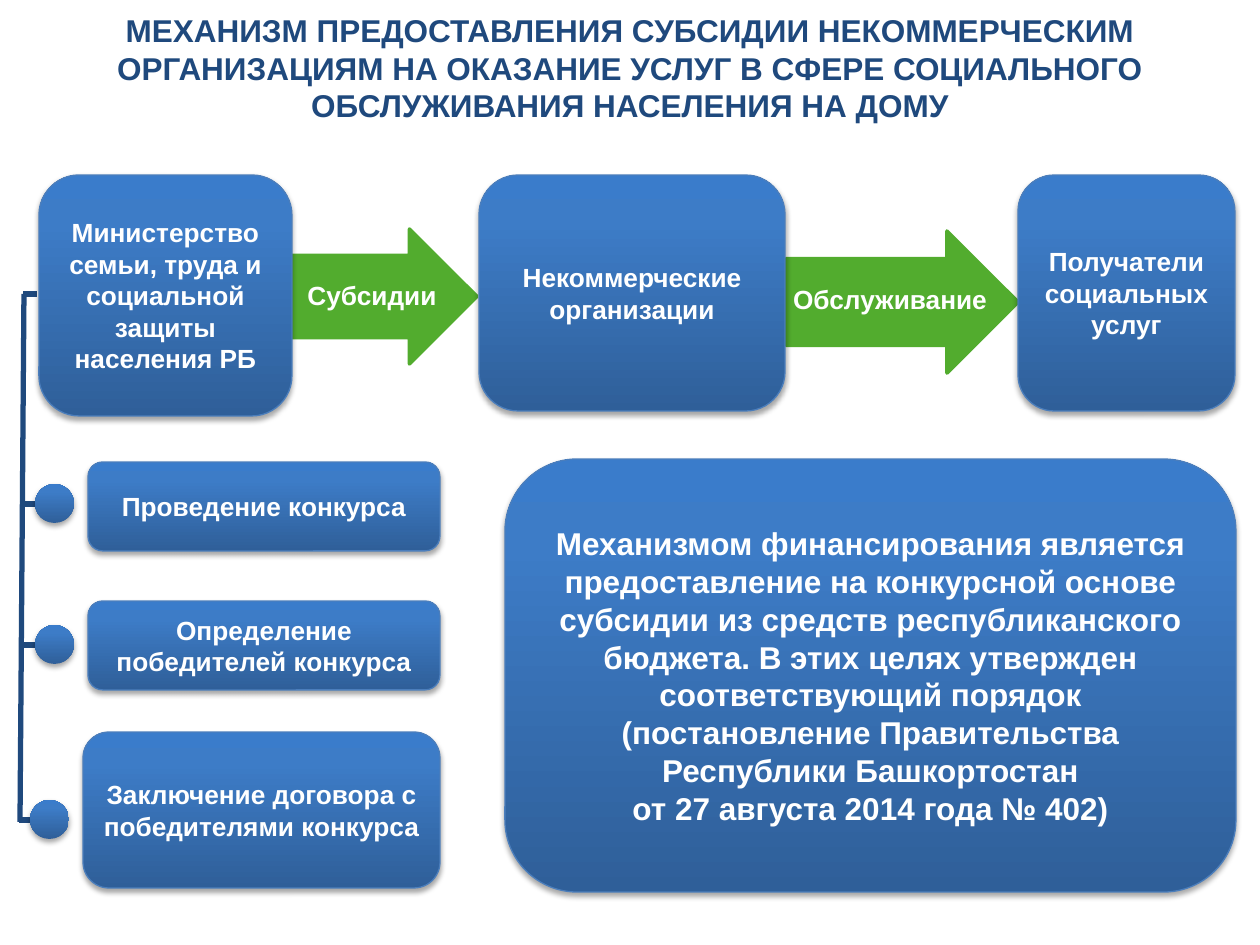
from lxml import etree
from pptx import Presentation
from pptx.dml.color import RGBColor
from pptx.enum.shapes import MSO_CONNECTOR, MSO_SHAPE
from pptx.enum.text import MSO_ANCHOR, MSO_AUTO_SIZE, PP_ALIGN
from pptx.oxml.ns import qn
from pptx.util import Pt

ROUNDED = MSO_SHAPE.ROUNDED_RECTANGLE
OVAL = MSO_SHAPE.OVAL
ARROW = MSO_SHAPE.RIGHT_ARROW
STRAIGHT = MSO_CONNECTOR.STRAIGHT
MIDDLE = MSO_ANCHOR.MIDDLE
NO_FIT = MSO_AUTO_SIZE.NONE
CENTER = PP_ALIGN.CENTER
LEFT = PP_ALIGN.LEFT

PX = 914400 / 126
NAVY, GREEN, EDGE, WHITE = "1F497D", "52AC2E", "4B7EBC", "FFFFFF"
GRADIENT = [(0, "2F5F99"), (80000, "3D7CC7"), (100000, "3A7CCB")]


def color(value):
    return RGBColor.from_string(value)


def write(shape, lines, size, font_color=WHITE, align=CENTER):
    text_frame = shape.text_frame
    text_frame.text = "\n".join(lines)
    for paragraph in text_frame.paragraphs:
        paragraph.alignment = align
        for run in paragraph.runs:
            run.font.name = "Arial"
            run.font.size = Pt(size)
            run.font.bold = True
            run.font.color.rgb = color(font_color)


presentation = Presentation()
presentation.slide_width = round(1260 * PX)
presentation.slide_height = round(945 * PX)
slide = presentation.slides.add_slide(presentation.slide_layouts[5])
shapes = slide.shapes

title = shapes.title
title.left, title.top, title.width, title.height = [round(v * PX) for v in (0, 5, 1260, 125)]
title.text_frame.word_wrap = True
title.text_frame.auto_size = NO_FIT
title.text_frame.vertical_anchor = MIDDLE
write(title, [
    "МЕХАНИЗМ ПРЕДОСТАВЛЕНИЯ СУБСИДИИ НЕКОММЕРЧЕСКИМ",
    "ОРГАНИЗАЦИЯМ НА ОКАЗАНИЕ УСЛУГ В СФЕРЕ СОЦИАЛЬНОГО",
    "ОБСЛУЖИВАНИЯ НАСЕЛЕНИЯ НА ДОМУ",
], 18, NAVY)

for box in [(292, 229, 185, 135), (786, 231, 232, 142)]:
    arrow = shapes.add_shape(ARROW, *[round(v * PX) for v in box])
    arrow.adjustments[0] = 0.61
    arrow.adjustments[1] = 0.5
    arrow.fill.solid()
    arrow.fill.fore_color.rgb = color(GREEN)
    arrow.line.color.rgb = color(GREEN)
    arrow.line.width = Pt(2)
    arrow.shadow.inherit = False

branches = [
    (37, 294, 23, 294),
    (24, 294, 20, 822),
    (20, 504, 38, 504),
    (20, 645, 38, 645),
    (19, 820, 35, 820),
]
for ends in branches:
    connector = shapes.add_connector(STRAIGHT, *[round(v * PX) for v in ends])
    connector.line.color.rgb = color(NAVY)
    connector.line.width = Pt(3)
    etree.SubElement(connector._element.spPr, qn("a:effectLst"))

blocks = [
    (ROUNDED, (39, 175, 253, 241), 15,
     ["Министерство", "семьи, труда и социальной", "защиты населения РБ"]),
    (ROUNDED, (479, 175, 306, 236), 15, ["Некоммерческие организации"]),
    (ROUNDED, (1018, 175, 217, 236), 15, ["Получатели социальных услуг"]),
    (ROUNDED, (88, 462, 352, 89), 15, ["Проведение конкурса"]),
    (ROUNDED, (88, 601, 352, 89), 15, ["Определение победителей конкурса"]),
    (ROUNDED, (83, 732, 357, 156), 15, ["Заключение договора с победителями конкурса"]),
    (ROUNDED, (505, 459, 731, 433), 18, [
        "Механизмом финансирования является предоставление на конкурсной основе "
        "субсидии из средств республиканского бюджета. В этих целях утвержден "
        "соответствующий порядок (постановление Правительства Республики Башкортостан",
        "от 27 августа 2014 года № 402)",
    ]),
    (OVAL, (35, 484, 39, 39), 15, []),
    (OVAL, (35, 625, 39, 39), 15, []),
    (OVAL, (30, 800, 39, 39), 15, []),
]
for kind, box, size, lines in blocks:
    block = shapes.add_shape(kind, *[round(v * PX) for v in box])
    block.fill.gradient()
    block.fill.gradient_angle = 90
    properties = block._element.spPr
    stops = properties.find(".//" + qn("a:gsLst"))
    for stop in list(stops):
        stops.remove(stop)
    for position, value in GRADIENT:
        stop = etree.SubElement(stops, qn("a:gs"), pos=str(position))
        etree.SubElement(stop, qn("a:srgbClr"), val=value)
    if kind == OVAL:
        block.line.fill.background()
    else:
        block.line.color.rgb = color(EDGE)
        block.line.width = Pt(0.75)
    block.shadow.inherit = False
    shadow = etree.SubElement(
        properties.find(qn("a:effectLst")), qn("a:outerShdw"),
        blurRad=str(Pt(3.1)), dist=str(Pt(1.8)), dir="5400000", rotWithShape="0")
    shade = etree.SubElement(shadow, qn("a:srgbClr"), val="000000")
    etree.SubElement(shade, qn("a:alpha"), val="35000")
    if lines:
        block.text_frame.word_wrap = True
        block.text_frame.vertical_anchor = MIDDLE
        write(block, lines, size)

labels = [
    ("Субсидии", (295, 273, 184, 44), LEFT, True, 1.0),
    ("Обслуживание", (779, 281, 222, 42), CENTER, False, 0.9),
]
for text, box, align, wrap, spacing in labels:
    label = shapes.add_textbox(*[round(v * PX) for v in box])
    label.text_frame.word_wrap = wrap
    write(label, [text], 15, WHITE, align)
    label.text_frame.paragraphs[0].line_spacing = spacing

presentation.save("out.pptx")
